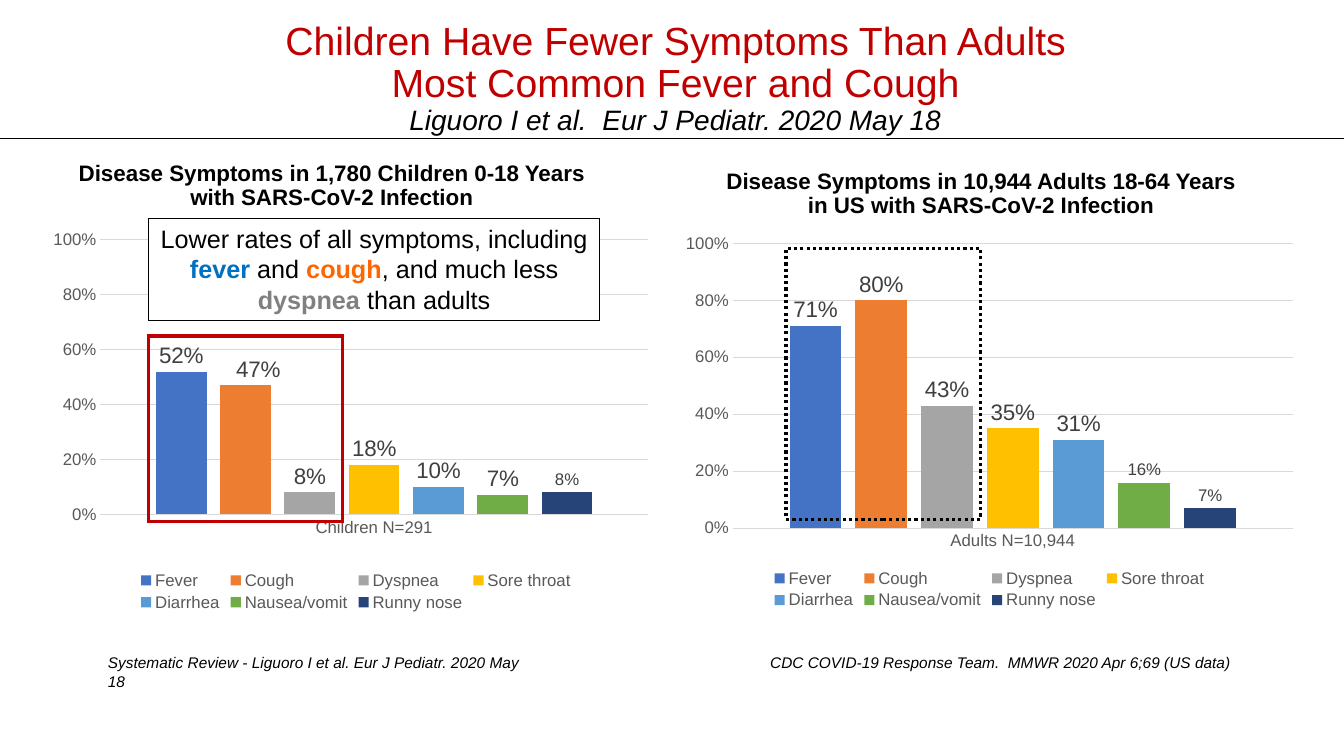
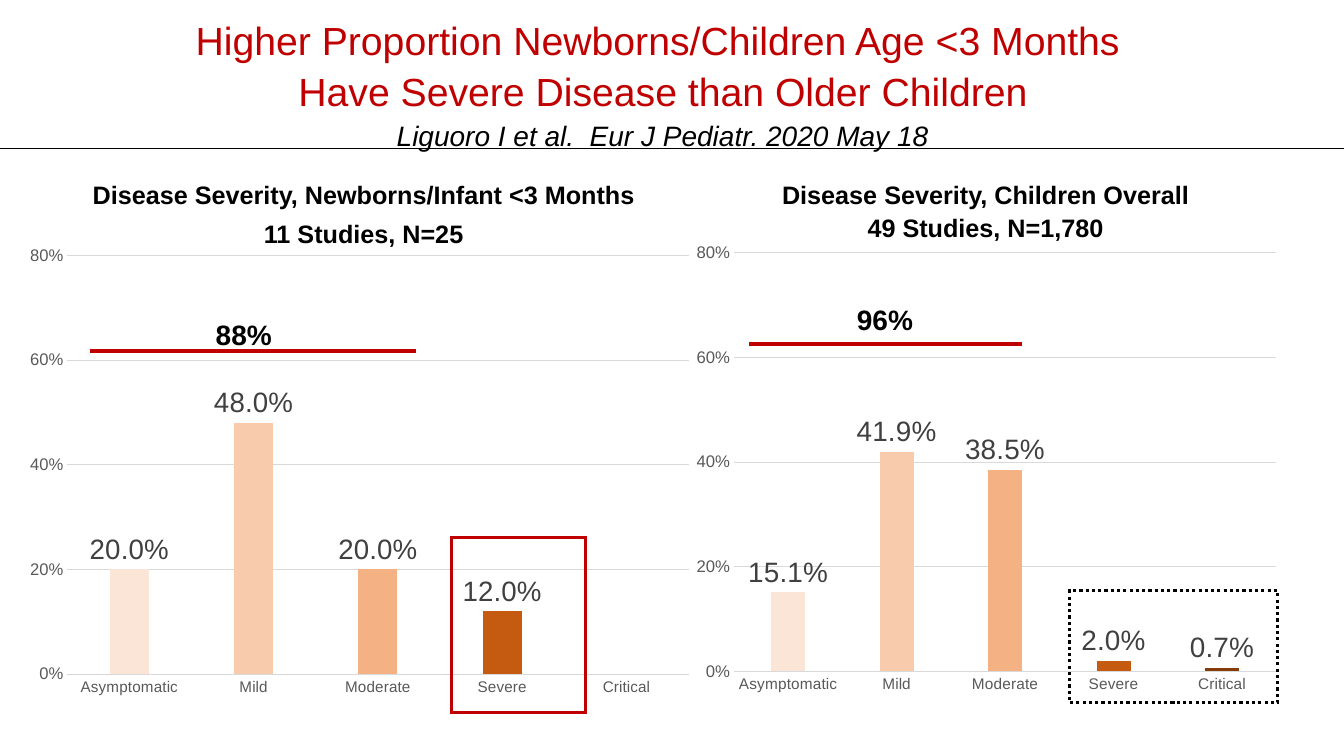
"""Build two slides comparing COVID-19 symptoms and severity by age group."""
from lxml import etree
from pptx import Presentation
from pptx.chart import data
from pptx.dml.color import RGBColor
from pptx.enum import chart as ch, dml, shapes, text
from pptx.oxml import ns
from pptx.util import Pt

FONT = "Arial"
COLORS = {
    "red": "C00000", "black": "000000", "white": "FFFFFF", "label": "404040",
    "axis": "595959", "grid": "D9D9D9", "fever": "0070C0", "cough": "FF6600",
    "dyspnea": "808080",
}
SYMPTOMS = {
    "Fever": "4472C4", "Cough": "ED7D31", "Dyspnea": "A5A5A5",
    "Sore throat": "FFC000", "Diarrhea": "5B9BD5", "Nausea/vomit": "70AD47",
    "Runny nose": "264478",
}
SEVERITY = {
    "Asymptomatic": "FBE5D6", "Mild": "F8CBAD", "Moderate": "F4B183",
    "Severe": "C55A11", "Critical": "843C0B",
}
CITATION = "Liguoro I et al.  Eur J Pediatr. 2020 May 18"
TITLE = {"size": 28, "color": "red"}
SUBTITLE = {"size": 20, "italic": True}
SOURCE = {"size": 11, "italic": True}


def rgb(color):
    """Return the colour for a palette name or a hex string."""
    return RGBColor.from_string(COLORS.get(color, color))


def style_font(font, color="black", size=18, **attrs):
    """Apply the shared font and the given format values."""
    font.color.rgb = rgb(color)
    values = {"name": FONT, "size": Pt(size), **attrs}
    for name, value in values.items():
        setattr(font, name, value)


def style_line(line, color, width, dash=None):
    """Give a line its colour, width and optional dash."""
    line.color.rgb = rgb(color)
    line.width = Pt(width)
    if dash:
        line.dash_style = dash


def fill_text(sp, paragraphs, align="CENTER", spacing=1.0, anchor="TOP", wrap=True):
    """Write paragraphs, each a list of (text, format) runs."""
    tf = sp.text_frame
    frame = {"word_wrap": wrap, "vertical_anchor": text.MSO_ANCHOR[anchor]}
    for name, value in frame.items():
        setattr(tf, name, value)
    for i, runs in enumerate(paragraphs):
        p = tf.add_paragraph() if i else tf.paragraphs[0]
        p.alignment = text.PP_ALIGN[align]
        p.line_spacing = spacing
        for content, fmt in runs:
            r = p.add_run()
            r.text = content
            style_font(r.font, **fmt)


def add_text(s, box, paragraphs, **layout):
    """Add a text box."""
    sp = s.shapes.add_textbox(*map(Pt, box))
    fill_text(sp, paragraphs, **layout)


def add_box(s, box, color, width=2.25, dash=None, fill=None):
    """Add a sharp-cornered rectangle, hollow unless a fill is given."""
    sp = s.shapes.add_shape(shapes.MSO_SHAPE.RECTANGLE, *map(Pt, box))
    sp.shadow.inherit = False
    if fill:
        sp.fill.solid()
        sp.fill.fore_color.rgb = rgb(fill)
    else:
        sp.fill.background()
    style_line(sp.line, color, width, dash)
    outline = sp._element.spPr.find(ns.qn("a:ln"))
    etree.SubElement(outline, ns.qn("a:miter")).set("lim", "800000")
    return sp


def add_rule(s, left, right, y, color, width):
    """Add a horizontal line."""
    line = s.shapes.add_connector(
        shapes.MSO_CONNECTOR.STRAIGHT, Pt(left), Pt(y), Pt(right), Pt(y))
    style_line(line.line, color, width)
    etree.SubElement(line._element.spPr, ns.qn("a:effectLst"))


def add_header(s, box, lines, spacing, rule_y):
    """Add the red title, its citation and the rule below."""
    paragraphs = [[(line, TITLE)] for line in lines] + [[(CITATION, SUBTITLE)]]
    add_text(s, box, paragraphs, spacing=spacing, anchor="MIDDLE")
    add_rule(s, 0, 960, rule_y, "black", 0.5)


def add_heading(s, box, lines, size, spacing):
    """Add a bold chart heading."""
    fmt = {"size": size, "bold": True}
    add_text(s, box, [[(line, fmt)] for line in lines],
             spacing=spacing, anchor="MIDDLE")


def add_total(s, left, right, y, label_box, label):
    """Add a red span line with its total above."""
    add_rule(s, left, right, y, "red", 3)
    add_text(s, label_box, [[(label, {"size": 20, "bold": True})]],
             align="LEFT", wrap=False)


def make_layout(**values):
    """Return a manual chart layout element."""
    layout = etree.Element(ns.qn("c:layout"))
    manual = etree.SubElement(layout, ns.qn("c:manualLayout"))
    for tag, value in values.items():
        etree.SubElement(manual, ns.qn("c:" + tag)).set("val", str(value))
    return layout


def place_plot(chart, plot):
    """Fix the inner plot area as fractions of the chart."""
    area = chart._chartSpace.find(".//" + ns.qn("c:plotArea"))
    for old in area.findall(ns.qn("c:layout")):
        area.remove(old)
    area.insert(0, make_layout(layoutTarget="inner", xMode="edge", yMode="edge",
                               **dict(zip("xywh", plot))))


def shift_label(series, size, number_format, x):
    """Move the label of the first point sideways."""
    label = series.points[0].data_label
    style_font(label.font, "label", size)
    label.position = ch.XL_LABEL_POSITION.OUTSIDE_END
    element = series._element.find(".//" + ns.qn("c:dLbl"))
    number = etree.Element(ns.qn("c:numFmt"), formatCode=number_format, sourceLinked="0")
    element.insert(1, make_layout(x=x, y=0))
    element.insert(2, number)


def style_axes(chart, maximum, category_size):
    """Style both axes and the gridlines."""
    value, category = chart.value_axis, chart.category_axis
    for axis, size in ((value, 12), (category, category_size)):
        axis.major_tick_mark = ch.XL_TICK_MARK.NONE
        style_font(axis.tick_labels.font, "axis", size)
    scale = {"minimum_scale": 0, "maximum_scale": maximum, "major_unit": 0.2}
    for name, setting in scale.items():
        setattr(value, name, setting)
    value.tick_labels.number_format = "0%"
    value.tick_labels.number_format_is_linked = False
    value.format.line.fill.background()
    style_line(value.major_gridlines.format.line, "grid", 0.75)
    style_line(category.format.line, "grid", 0.75)
    category.has_major_gridlines = False


def add_columns(s, box, categories, series, colors, plot, maximum, category_size):
    """Add a clustered column chart with the shared look."""
    cd = data.CategoryChartData()
    cd.categories = categories
    for name, values in series:
        cd.add_series(name, values)
    chart = s.shapes.add_chart(
        ch.XL_CHART_TYPE.COLUMN_CLUSTERED, *map(Pt, box), cd).chart
    style_font(chart.font, size=10)
    chart.has_title = False
    chart.has_legend = False
    settings = {"gap_width": 219, "overlap": -27, "vary_by_categories": False}
    for name, value in settings.items():
        setattr(chart.plots[0], name, value)
    for ser, color in zip(chart.plots[0].series, colors):
        paint(ser, color)
    style_axes(chart, maximum, category_size)
    place_plot(chart, plot)
    return chart


def paint(item, color):
    """Fill a series or a point."""
    item.format.fill.solid()
    item.format.fill.fore_color.rgb = rgb(color)


def label_series(series, size, number_format):
    """Show values above the columns of a series."""
    labels = series.data_labels
    values = {"show_value": True, "number_format": number_format,
              "number_format_is_linked": False,
              "position": ch.XL_LABEL_POSITION.OUTSIDE_END}
    for name, value in values.items():
        setattr(labels, name, value)
    style_font(labels.font, "label", size)


def add_symptom_chart(s, box, group, values, plot, large):
    """Add one column per symptom; the first ones get large labels."""
    series = [(name, [value]) for name, value in zip(SYMPTOMS, values)]
    chart = add_columns(s, box, [group], series, SYMPTOMS.values(), plot, 1, 12)
    for i, ser in enumerate(chart.plots[0].series):
        label_series(ser, 16 if i < large else 12, "0%")
    chart.has_legend = True
    chart.legend.position = ch.XL_LEGEND_POSITION.BOTTOM
    chart.legend.include_in_layout = False
    style_font(chart.legend.font, "axis", 12)
    return chart


def add_severity_chart(s, box, values, plot):
    """Add one column per severity level."""
    series = [("Series 1", values), ("Series 2", []), ("Series 3", [])]
    chart = add_columns(s, box, list(SEVERITY), series,
                        ("FF6600", "ED7D31", "A5A5A5"), plot, 0.8, 11)
    ser = chart.plots[0].series[0]
    for i, color in enumerate(SEVERITY.values()):
        paint(ser.points[i], color)
    label_series(ser, 20, "0.0%")


def build_symptoms(s):
    """Fill the slide on symptoms in children and adults."""
    add_heading(s, (18.5, 100.5, 441.5, 65),
                ["Disease Symptoms in 1,780 Children 0-18 Years ",
                 "with SARS-CoV-2 Infection "], 16, 0.9)
    add_heading(s, (480, 106.5, 441.5, 65),
                ["Disease Symptoms in 10,944 Adults 18-64 Years",
                 "in US with SARS-CoV-2 Infection"], 16, 0.9)
    children = add_symptom_chart(
        s, (29.5, 161.5, 449.5, 278), "Children N=291",
        [0.52, 0.47, 0.08, 0.18, 0.1, 0.07, 0.08], (0.094, 0.035, 0.87, 0.706), 6)
    shift_label(children.plots[0].series[1], 16, "0%", 0.02)
    add_symptom_chart(s, (481, 162, 451.5, 276), "Adults N=10,944",
                      [0.71, 0.8, 0.43, 0.35, 0.31, 0.16, 0.07],
                      (0.094, 0.043, 0.886, 0.737), 5)
    sources = [
        ((70, 463, 322.5, 21),
         "Systematic Review - Liguoro I et al. Eur J Pediatr. 2020 May 18"),
        ((543, 463, 347, 21),
         "CDC COVID-19 Response Team.  MMWR 2020 Apr 6;69 (US data)"),
    ]
    for box, source in sources:
        add_text(s, box, [[(source, SOURCE)]], align="LEFT")
    add_header(s, (2, -7.5, 961, 128),
               ["Children Have Fewer Symptoms Than Adults",
                "Most Common Fever and Cough"], 0.9, 98.6)
    callout = add_box(s, (106, 156, 322.5, 73), "black", 0.75, fill="white")
    fill_text(callout, [
        [("Lower rates of all symptoms, including", {})],
        [("fever", {"color": "fever", "bold": True}), (" and ", {}),
         ("cough", {"color": "cough", "bold": True}), (", and much less", {})],
        [("dyspnea", {"color": "dyspnea", "bold": True}), (" than adults", {})],
    ])
    add_box(s, (561.5, 177.5, 139, 193.5), "black", dash=dml.MSO_LINE.ROUND_DOT)
    add_box(s, (106, 240, 139, 132.5), "red")


def build_severity(s):
    """Fill the slide on severity in infants and children overall."""
    add_header(s, (-7, -4, 961, 124.5),
               ["Higher Proportion Newborns/Children Age <3 Months ",
                "Have Severe Disease than Older Children"], 1.1, 106)
    add_severity_chart(s, (21.5, 173.5, 479.5, 336), [0.2, 0.48, 0.2, 0.12, None],
                       (0.043, 0.027, 0.938, 0.89))
    add_heading(s, (45.5, 122.5, 428.5, 54),
                ["Disease Severity, Newborns/Infant <3 Months",
                 "11 Studies, N=25"], 18, 1.3)
    add_box(s, (322.5, 384, 96, 125), "red")
    add_total(s, 64, 297.5, 250.5, (147, 223, 54.5, 31.5), "88%")
    add_heading(s, (511.5, 119.5, 385, 60.5),
                ["Disease Severity, Children Overall",
                 "49 Studies, N=1,780"], 18, 1.1)
    add_severity_chart(s, (497.5, 171.5, 414.5, 336),
                       [0.151, 0.419, 0.385, 0.02, 0.007],
                       (0.081, 0.027, 0.938, 0.89))
    add_box(s, (764, 422, 148.5, 80), "black", dash=dml.MSO_LINE.ROUND_DOT)
    add_total(s, 535, 730, 245.5, (605, 212.5, 54.5, 31.5), "96%")


def main():
    """Build and save the presentation."""
    prs = Presentation()
    prs.slide_width, prs.slide_height = Pt(960), Pt(540)
    for build in (build_symptoms, build_severity):
        build(prs.slides.add_slide(prs.slide_layouts[6]))
    prs.save("out.pptx")


if __name__ == "__main__":
    main()
